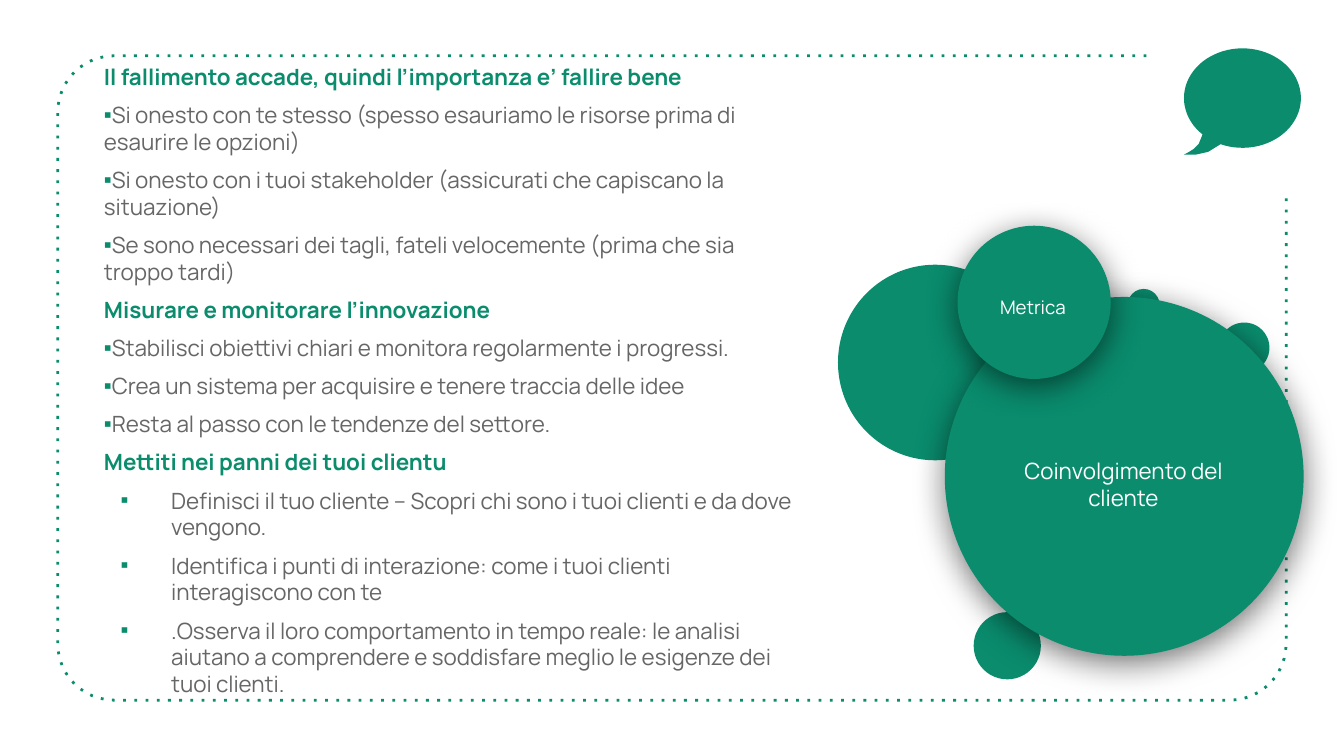
from math import cos, sin, radians
from lxml import etree
from pptx import Presentation
from pptx.dml.color import RGBColor
from pptx.enum.shapes import MSO_SHAPE as SHAPE
from pptx.enum.text import MSO_ANCHOR as ANCHOR, PP_ALIGN as ALIGN
from pptx.oxml import parse_xml
from pptx.oxml.ns import qn
from pptx.util import Pt

PX = 4572  # 200 px to the inch
FONT, BULLET_FONT = "Manrope", "Arial"
GREEN, GREY, WHITE = "0A8C6D", "666666", "FFFFFF"
SHADOW = (
    '<a:effectLst xmlns:a="http://schemas.openxmlformats.org/drawingml/2006/main">'
    '<a:outerShdw blurRad="228600" dist="50800" dir="5400000" algn="ctr" rotWithShape="0">'
    '<a:srgbClr val="000000"><a:alpha val="54000"/></a:srgbClr>'
    "</a:outerShdw></a:effectLst>"
)


def paint(color_format, color):
    color_format.rgb = RGBColor.from_string(color)


def arc(center_x, center_y, radius_x, radius_y, start, end, steps):
    """Points along an ellipse, in EMU; angles run clockwise from the right."""
    angles = [radians(start + (end - start) * i / steps) for i in range(steps + 1)]
    return [(round((center_x + radius_x * cos(a)) * PX),
             round((center_y + radius_y * sin(a)) * PX)) for a in angles]


deck = Presentation()
deck.slide_width, deck.slide_height = 2000 * PX, 1125 * PX
page = deck.slides.add_slide(deck.slide_layouts[6])
shapes = page.shapes

# Dotted frame, open at the top right
frame_points = [(1706 * PX, 83 * PX)]
for center_x, center_y, start in [(170, 167, 270), (170, 958, 180), (1830, 958, 90)]:
    frame_points += arc(center_x, center_y, 84, 84, start, start - 90, 12)
frame_points.append((1914 * PX, 292 * PX))
builder = shapes.build_freeform(*frame_points[0], scale=1.0)
builder.add_line_segments(frame_points[1:], close=False)
frame = builder.convert_to_shape()
frame.shadow.inherit = False
frame.fill.background()
paint(frame.line.color, GREEN)
frame.line.width = Pt(1.5)
outline = frame._element.spPr.find(qn("a:ln"))
etree.SubElement(outline, qn("a:prstDash")).set("val", "dot")

# Body text: (kind, wording)
body_text = [
    ("heading", "Il fallimento accade, quindi l’importanza e’ fallire bene"),
    ("bullet", "Si onesto con te stesso (spesso esauriamo le risorse prima di esaurire le opzioni)"),
    ("bullet", "Si onesto con i tuoi stakeholder (assicurati che capiscano la situazione)"),
    ("bullet", "Se sono necessari dei tagli, fateli velocemente (prima che sia troppo tardi)"),
    ("heading", "Misurare e monitorare l’innovazione"),
    ("bullet", "Stabilisci obiettivi chiari e monitora regolarmente i progressi."),
    ("bullet", "Crea un sistema per acquisire e tenere traccia delle idee"),
    ("bullet", "Resta al passo con le tendenze del settore."),
    ("heading", "Mettiti nei panni dei tuoi clientu"),
    ("indented", "Definisci il tuo cliente – Scopri chi sono i tuoi clienti e da dove vengono."),
    ("indented", "Identifica i punti di interazione: come i tuoi clienti interagiscono con te"),
    ("indented", ".Osserva il loro comportamento in tempo reale: le analisi aiutano a comprendere "
                 "e soddisfare meglio le esigenze dei tuoi clienti."),
]
indents = {"bullet": (0, -16), "indented": (100, -75)}
box = shapes.add_textbox(135 * PX, 74 * PX, 1080 * PX, 518 * PX)
body = box.text_frame
body.word_wrap = True
body.margin_left = body.margin_right = 20 * PX
body.margin_top = body.margin_bottom = 20 * PX
for index, (kind, words) in enumerate(body_text):
    para = body.add_paragraph() if index else body.paragraphs[0]
    para.space_before = Pt(6)
    span = para.add_run()
    span.text = words
    span.font.name, span.font.size = FONT, Pt(12)
    span.font.bold = kind == "heading"
    paint(span.font.color, GREEN if kind == "heading" else GREY)
    if kind in indents:
        para.level = 1 if kind == "indented" else 0
        margin, indent = indents[kind]
        props = para._p.get_or_add_pPr()
        props.set("marL", str(margin * PX))
        props.set("indent", str(indent * PX))
        bullet_color = etree.SubElement(props, qn("a:buClr"))
        etree.SubElement(bullet_color, qn("a:srgbClr")).set("val", GREEN)
        etree.SubElement(props, qn("a:buFont")).set("typeface", BULLET_FONT)
        etree.SubElement(props, qn("a:buChar")).set("char", "▪")

# Speech bubble: an oval with a tail at the lower left
bubble_points = arc(1849, 146, 87, 74, 112, -227, 72)
tail = [(1784, 214), (1776, 222), (1768, 227), (1762, 230), (1780, 230), (1798, 226)]
bubble_points += [(x * PX, y * PX) for x, y in tail]
builder = shapes.build_freeform(*bubble_points[0], scale=1.0)
builder.add_line_segments(bubble_points[1:], close=True)
bubble = builder.convert_to_shape()
bubble.shadow.inherit = False
bubble.fill.solid()
paint(bubble.fill.fore_color, GREEN)
bubble.line.fill.background()

# Circles, back to front: left, top, width, height, outlined, label
circles = [
    (1449, 911, 100, 100, False, None),
    (1814, 480, 75, 75, False, None),
    (1248, 395, 287, 289, True, None),
    (1679, 431, 46, 47, True, None),
    (1406, 442, 534, 534, False, ("Coinvolgimento del cliente", 12, (1468, 594, 408, 254))),
    (1426, 337, 226, 226, True, ("Metrica", 10, (1451, 397, 172, 120))),
]
for left, top, width, height, outlined, label in circles:
    circle = shapes.add_shape(SHAPE.OVAL, left * PX, top * PX, width * PX, height * PX)
    circle.fill.solid()
    paint(circle.fill.fore_color, GREEN)
    if outlined:
        paint(circle.line.color, GREEN)
        circle.line.width = Pt(0.75)
    else:
        circle.line.fill.background()
    if not label:
        circle.shadow.inherit = False
        continue
    circle._element.spPr.append(parse_xml(SHADOW))

    # Label over the circle
    words, size, place = label
    box = shapes.add_textbox(*[length * PX for length in place])
    label_text = box.text_frame
    label_text.word_wrap = True
    label_text.vertical_anchor = ANCHOR.MIDDLE
    label_text.margin_left = label_text.margin_right = 20 * PX
    label_text.margin_top = label_text.margin_bottom = 20 * PX
    para = label_text.paragraphs[0]
    para.alignment = ALIGN.CENTER
    span = para.add_run()
    span.text = words
    span.font.name, span.font.size = FONT, Pt(size)
    paint(span.font.color, WHITE)

deck.save("out.pptx")
